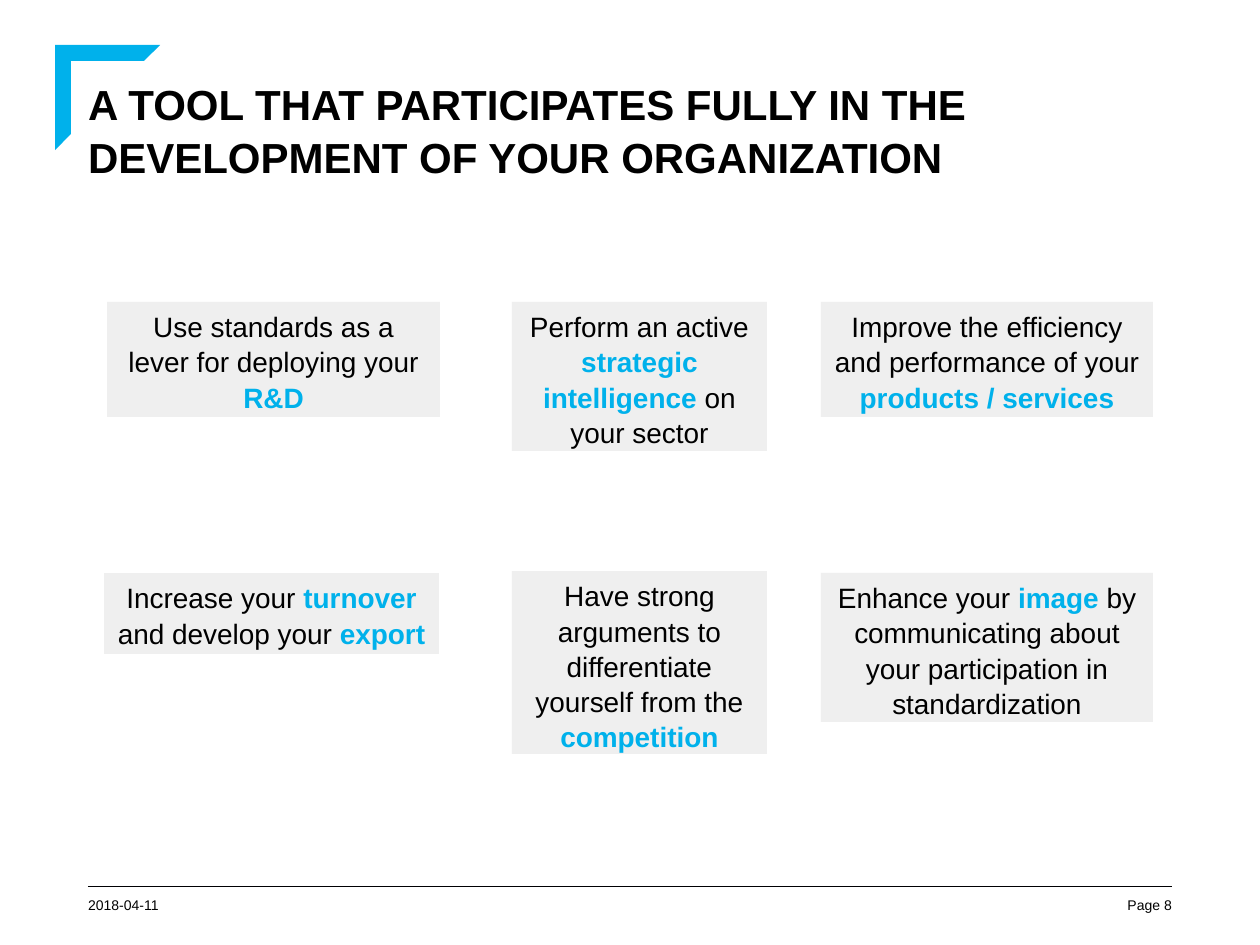
from dataclasses import dataclass

from lxml import etree
from pptx import Presentation
from pptx.dml.color import RGBColor
from pptx.enum.shapes import MSO_CONNECTOR, MSO_SHAPE
from pptx.enum.text import MSO_ANCHOR as Anchor, MSO_AUTO_SIZE as AutoSize, PP_ALIGN as Align
from pptx.oxml.ns import qn
from pptx.util import Pt

PX = 914400 / 126


@dataclass(frozen=True)
class Theme:
    font: str = "Arial"
    ink: RGBColor = RGBColor(0, 0, 0)
    rule: RGBColor = RGBColor(0, 0, 3)
    accent: RGBColor = RGBColor(0x00, 0xB1, 0xEB)
    panel: RGBColor = RGBColor(0xEF, 0xEF, 0xEF)
    title_size: int = 24
    card_size: int = 16
    footer_size: int = 8
    leading: float = 1.05


THEME = Theme()

TITLE = "A TOOL THAT PARTICIPATES FULLY IN THE DEVELOPMENT OF YOUR ORGANIZATION"
TITLE_BOX = (88, 76, 1084, 106)

# (left, top, width, line count), then alternating plain and highlighted text
CARDS = [
    ((107, 302, 333, 3), ["Use standards as a lever for deploying your ", "R&D"]),
    ((512, 302, 255, 4), ["Perform an active ", "strategic intelligence ", "on your sector"]),
    ((821, 302, 332, 3), ["Improve the efficiency and performance of your ", "products / services"]),
    ((104, 573, 335, 2), ["Increase your ", "turnover", " and develop your ", "export"]),
    ((512, 571, 255, 5), ["Have strong arguments to differentiate yourself from the ", "competition"]),
    ((821, 573, 332, 4), ["Enhance your ", "image", " by communicating about your participation in standardization"]),
]
CARD_PADDING, CARD_LINE = 13, 34

FOOTERS = [
    ("Page 8", (1118, 897, 54, 16), Align.RIGHT),
    ("2018-04-11", (88, 897, 132, 16), Align.LEFT),
]
FOOTER_RULE = (88, 886, 1172, 886)
CORNER = [(160, 45), (55, 45), (55, 150), (71, 134), (71, 61), (144, 61)]


def emu(lengths):
    return [round(length * PX) for length in lengths]


def add_run(paragraph, words, size, color=THEME.ink, bold=False):
    run = paragraph.add_run()
    run.text = words
    font = run.font
    font.name, font.size, font.bold = THEME.font, Pt(size), bold
    font.color.rgb = color


def clear_margins(frame):
    frame.margin_left = frame.margin_right = frame.margin_top = frame.margin_bottom = 0


def add_title(slide):
    title = slide.shapes.title
    title.left, title.top, title.width, title.height = emu(TITLE_BOX)
    frame = title.text_frame
    clear_margins(frame)
    frame.word_wrap = True
    frame.auto_size = AutoSize.NONE
    frame.vertical_anchor = Anchor.MIDDLE
    paragraph = frame.paragraphs[0]
    paragraph.alignment = Align.LEFT
    paragraph.line_spacing = THEME.leading
    add_run(paragraph, TITLE, THEME.title_size, bold=True)


def add_corner(slide):
    builder = slide.shapes.build_freeform(*CORNER[0], scale=PX)
    builder.add_line_segments(CORNER[1:], close=True)
    corner = builder.convert_to_shape()
    corner.shadow.inherit = False
    corner.fill.solid()
    corner.fill.fore_color.rgb = THEME.accent
    corner.line.fill.background()


def add_card(slide, place, phrases):
    left, top, width, lines = place
    box = emu((left, top, width, lines * CARD_LINE + CARD_PADDING))
    card = slide.shapes.add_shape(MSO_SHAPE.RECTANGLE, *box)
    card.shadow.inherit = False
    card.fill.solid()
    card.fill.fore_color.rgb = THEME.panel
    card.line.fill.background()
    frame = card.text_frame
    frame.word_wrap = True
    frame.auto_size = AutoSize.SHAPE_TO_FIT_TEXT
    frame.vertical_anchor = Anchor.TOP
    paragraph = frame.paragraphs[0]
    paragraph.alignment = Align.CENTER
    paragraph.line_spacing = THEME.leading
    for index, phrase in enumerate(phrases):
        highlighted = index % 2 == 1
        color = THEME.accent if highlighted else THEME.ink
        add_run(paragraph, phrase, THEME.card_size, color, highlighted)


def add_footer_rule(slide):
    rule = slide.shapes.add_connector(MSO_CONNECTOR.STRAIGHT, *emu(FOOTER_RULE))
    rule.line.color.rgb = THEME.rule
    rule.line.width = Pt(0.25)
    etree.SubElement(rule._element.spPr, qn("a:effectLst"))


def add_footer(slide, words, box, alignment):
    frame = slide.shapes.add_textbox(*emu(box)).text_frame
    clear_margins(frame)
    frame.word_wrap = False
    frame.auto_size = AutoSize.SHAPE_TO_FIT_TEXT
    frame.vertical_anchor = Anchor.MIDDLE
    paragraph = frame.paragraphs[0]
    paragraph.alignment = alignment
    add_run(paragraph, words, THEME.footer_size)


def main():
    deck = Presentation()
    deck.slide_width, deck.slide_height = emu((1260, 945))
    slide = deck.slides.add_slide(deck.slide_layouts[5])
    add_footer_rule(slide)
    add_corner(slide)
    add_title(slide)
    for place, phrases in CARDS:
        add_card(slide, place, phrases)
    for footer in FOOTERS:
        add_footer(slide, *footer)
    deck.save("out.pptx")


if __name__ == "__main__":
    main()
